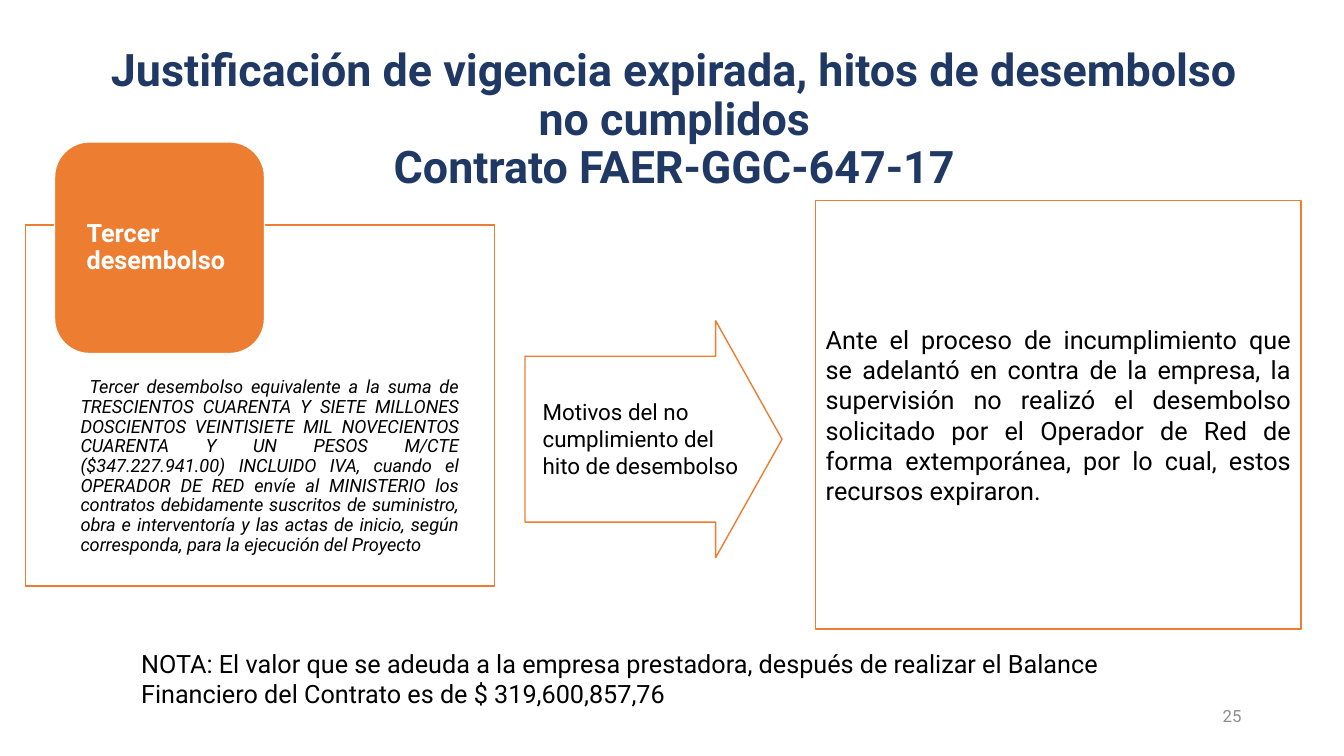
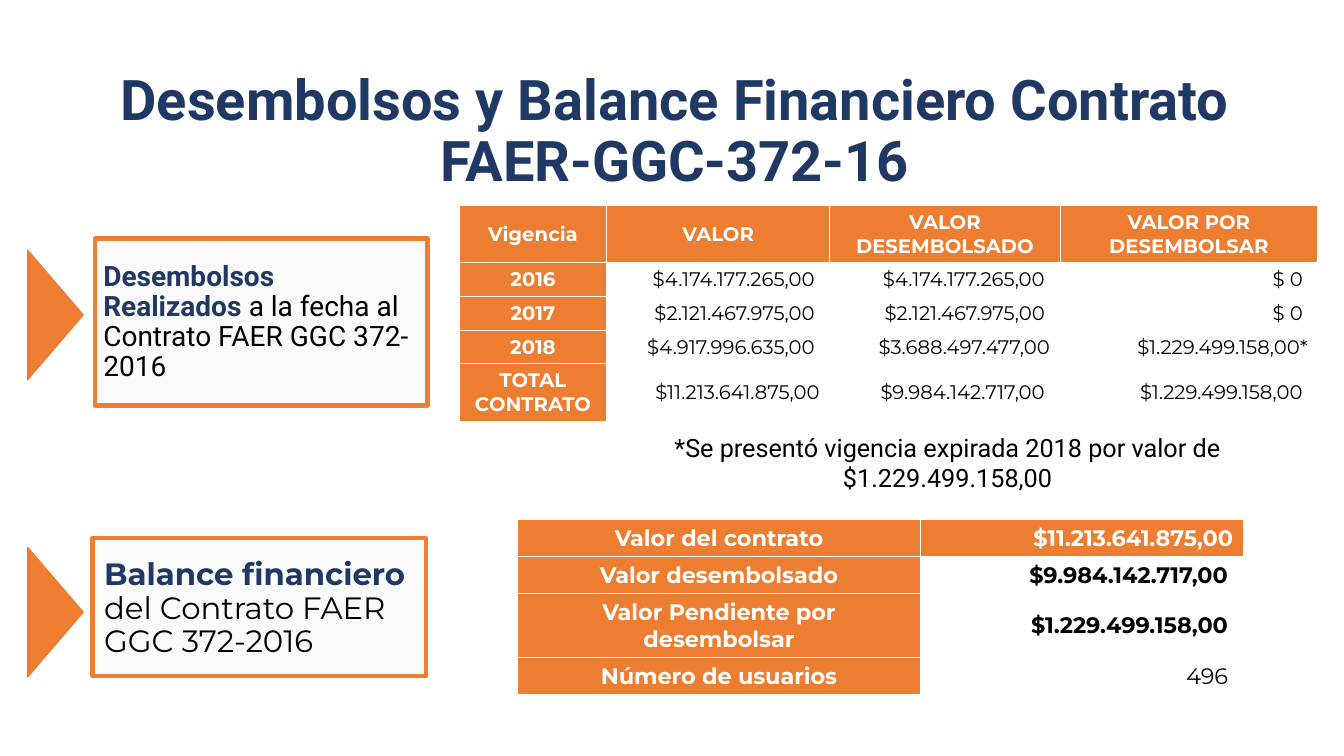
from lxml import etree
from pptx import Presentation
from pptx.dml.color import RGBColor
from pptx.enum.shapes import MSO_SHAPE as Shape
from pptx.enum.text import MSO_ANCHOR as Anchor, PP_ALIGN as Align
from pptx.oxml.ns import qn
from pptx.util import Inches, Pt

NAVY = RGBColor(0x20, 0x38, 0x64)
ORANGE = RGBColor(0xED, 0x7D, 0x31)
WHITE = RGBColor(0xFF, 0xFF, 0xFF)
BLACK = RGBColor(0, 0, 0)
GRAY = RGBColor(0x8C, 0x8C, 0x8C)
PALE = RGBColor(0xFA, 0xFA, 0xFA)
BODY, DATA = "Roboto", "Montserrat"

# Grid of 160 columns by 90 rows of square cells
deck = Presentation()
deck.slide_width, deck.slide_height = Inches(13.33), Inches(7.5)
CELL = deck.slide_width / 160
INSET = (1.2, 0.6, 1.2, 0.6)


def put(slide, kind, box, fill=None, edge=None, weight=1):
    """Place a shape, or a text box when kind is None, on the grid."""
    place = [round(n * CELL) for n in box]
    if kind is None:
        return slide.shapes.add_textbox(*place)
    shape = slide.shapes.add_shape(kind, *place)
    shape.shadow.inherit = False
    shape.fill.solid()
    shape.fill.fore_color.rgb = fill
    shape.line.color.rgb = edge or fill
    shape.line.width = Pt(weight)
    return shape


def write(frame, runs, size, align=Align.LEFT, anchor=Anchor.TOP,
          inset=INSET, space=1.0, font=BODY):
    """Fill one paragraph with runs of (text, colour, bold, italic)."""
    frame.word_wrap = True
    frame.vertical_anchor = anchor
    (frame.margin_left, frame.margin_top, frame.margin_right,
     frame.margin_bottom) = [round(n * CELL) for n in inset]
    para = frame.paragraphs[0]
    para.alignment, para.line_spacing = align, space
    for text, tint, bold, slant in runs:
        if text == "\n":
            para.add_line_break()
            continue
        run = para.add_run()
        run.text = text
        run.font.name, run.font.size = font, Pt(size)
        run.font.bold, run.font.italic = bold, slant
        run.font.color.rgb = tint
    return para


# Slides and their titles
titles = [
    (32, ["Justificación de vigencia expirada, hitos de desembolso no cumplidos",
          "\n", "Contrato FAER-GGC-647-17"]),
    (40, ["Desembolsos y Balance Financiero Contrato FAER-GGC-372-16"]),
]
pages = []
for size, parts in titles:
    page = deck.slides.add_slide(deck.slide_layouts[6])
    head = put(page, None, (11.3, 4, 138, 19.6))
    write(head.text_frame, [(part, NAVY, True, False) for part in parts],
          size, Align.CENTER, Anchor.BOTTOM, space=0.9)
    pages.append(page)
cause, funds = pages

# Arrow between the milestone and its outcome
arrow = put(cause, Shape.RIGHT_ARROW, (62.5, 38.2, 30.6, 28.2), WHITE, ORANGE)
arrow.adjustments[0], arrow.adjustments[1] = 0.7, 0.28

# Milestone panel with its tag
panel = put(cause, Shape.RECTANGLE, (3, 26.8, 55.9, 43), WHITE, ORANGE)
para = write(panel.text_frame, [(
    "Tercer desembolso equivalente a la suma de TRESCIENTOS CUARENTA Y SIETE "
    "MILLONES DOSCIENTOS VEINTISIETE MIL NOVECIENTOS CUARENTA Y UN PESOS M/CTE "
    "($347.227.941.00) INCLUIDO IVA, cuando el OPERADOR DE RED envíe al "
    "MINISTERIO los contratos debidamente suscritos de suministro, obra e "
    "interventoría y las actas de inicio, según corresponda, para la ejecución "
    "del Proyecto", BLACK, False, True)],
    13, Align.JUSTIFY, inset=(4.3, 18.2, 4.3, 1.4), space=0.9)
props = para._p.get_or_add_pPr()
props.set("marL", str(Inches(0.19)))
props.set("indent", str(Inches(0.09)))

tag = put(cause, Shape.ROUNDED_RECTANGLE, (6.5, 16.9, 25, 25.2), ORANGE, WHITE)
write(tag.text_frame, [("Tercer desembolso", WHITE, True, False)], 18,
      anchor=Anchor.MIDDLE, inset=(2.6, 0, 2.6, 0), space=0.9)

# Outcome frame
frame = put(cause, Shape.RECTANGLE, (97.1, 23.9, 57.8, 51), WHITE, ORANGE)
write(frame.text_frame, [(
    "Ante el proceso de incumplimiento que se adelantó en contra de la empresa, "
    "la supervisión no realizó el desembolso solicitado por el Operador de Red "
    "de forma extemporánea, por lo cual, estos recursos expiraron.",
    BLACK, False, False)], 18, Align.JUSTIFY, Anchor.MIDDLE)

# Plain texts
notes = [
    (cause, (63.4, 46.8, 25.8, 10.9), 16, Align.LEFT, BLACK,
     "Motivos del no cumplimiento del hito de desembolso"),
    (cause, (15.6, 76.6, 118.2, 12.1), 18, Align.LEFT, BLACK,
     "NOTA: El valor que se adeuda a la empresa prestadora, después de realizar "
     "el Balance Financiero del Contrato es de $ 319,600,857,76"),
    (cause, (113, 83.4, 36, 4.8), 12, Align.RIGHT, GRAY, "25"),
    (funds, (72.8, 50.9, 80, 8.5), 18, Align.CENTER, BLACK,
     "*Se presentó vigencia expirada 2018 por valor de $1.229.499.158,00"),
]
for page, box, size, align, tint, text in notes:
    note = put(page, None, box)
    write(note.text_frame, [(text, tint, False, False)], size, align)

# Section cards, each with a pointer
cards = [
    ((11.3, 28.4, 39.6, 19.9), 34.2, (1, 2.8, 1.4, 0.6), 20, BODY,
     "Desembolsos Realizados ", "a la fecha al Contrato FAER GGC 372-2016"),
    ((11, 64.1, 39.7, 16.4), 69.6, (1.4, 2.5, 0, 0.6), 22, DATA,
     "Balance financiero ", "del Contrato FAER GGC 372-2016"),
]
for box, top, inset, size, font, lead, rest in cards:
    card = put(funds, Shape.RECTANGLE, box, PALE, ORANGE, 3)
    write(card.text_frame,
          [(lead, NAVY, True, False), (rest, BLACK, False, False)],
          size, inset=inset, space=0.9, font=font)
    mark = put(funds, Shape.ISOSCELES_TRIANGLE, (-1.1, top, 15.4, 6.6), ORANGE)
    mark.rotation = 90

# Tables: origin, columns, rows, text size, bold values, cell texts
tables = [
    ((54.7, 24.5), (17.5, 26.6, 27.4, 30.7), (6.7, 4, 4, 4, 6.7), 14, False, [
        ["Vigencia", "VALOR", "VALOR DESEMBOLSADO", "VALOR POR DESEMBOLSAR"],
        ["2016", "$4.174.177.265,00", "$4.174.177.265,00", "$ 0"],
        ["2017", "$2.121.467.975,00", "$2.121.467.975,00", "$ 0"],
        ["2018", "$4.917.996.635,00", "$3.688.497.477,00", "$1.229.499.158,00*"],
        ["TOTAL CONTRATO", "$11.213.641.875,00", "$9.984.142.717,00",
         "$1.229.499.158,00"]]),
    ((61.6, 61.9), (48, 38.4), (4.4, 4.4, 7.6, 4.4), 16, True, [
        ["Valor del contrato", "$11.213.641.875,00"],
        ["Valor desembolsado", "$9.984.142.717,00"],
        ["Valor Pendiente por desembolsar", "$1.229.499.158,00"],
        ["Número de usuarios", "496"]]),
]
FLUSH = {"$11.213.641.875,00", "$3.688.497.477,00", "$1.229.499.158,00*"}
for spot, cols, rows, size, strong, texts in tables:
    box = [round(n * CELL) for n in (*spot, sum(cols), sum(rows))]
    grid = funds.shapes.add_table(len(rows), len(cols), *box).table
    grid.first_row = grid.horz_banding = False
    for col, width in zip(grid.columns, cols):
        col.width = round(width * CELL)
    for row, height in zip(grid.rows, rows):
        row.height = round(height * CELL)
    for r, line in enumerate(texts):
        for c, text in enumerate(line):
            cell = grid.cell(r, c)
            head = r == 0 or c == 0
            if head:
                cell.fill.solid()
                cell.fill.fore_color.rgb = ORANGE
            else:
                cell.fill.background()
            value = c > 0 and text[0] in "$4"
            bold = head or (strong and text != "496")
            right = 1.8 if value and text not in FLUSH else 1.2
            para = write(cell.text_frame,
                         [(text, WHITE if head else BLACK, bold, False)], size,
                         Align.RIGHT if value else Align.CENTER, font=DATA)
            cell.vertical_anchor = Anchor.MIDDLE
            cell.margin_left = round(1.2 * CELL)
            cell.margin_right = round(right * CELL)
            # White rules around the cell
            props = cell._tc.get_or_add_tcPr()
            for i, side in enumerate(("lnL", "lnR", "lnT", "lnB")):
                rule = etree.Element(qn("a:" + side), w=str(Pt(0.75)))
                paint = etree.SubElement(rule, qn("a:solidFill"))
                etree.SubElement(paint, qn("a:srgbClr"), val=str(WHITE))
                props.insert(i, rule)

deck.save("out.pptx")
